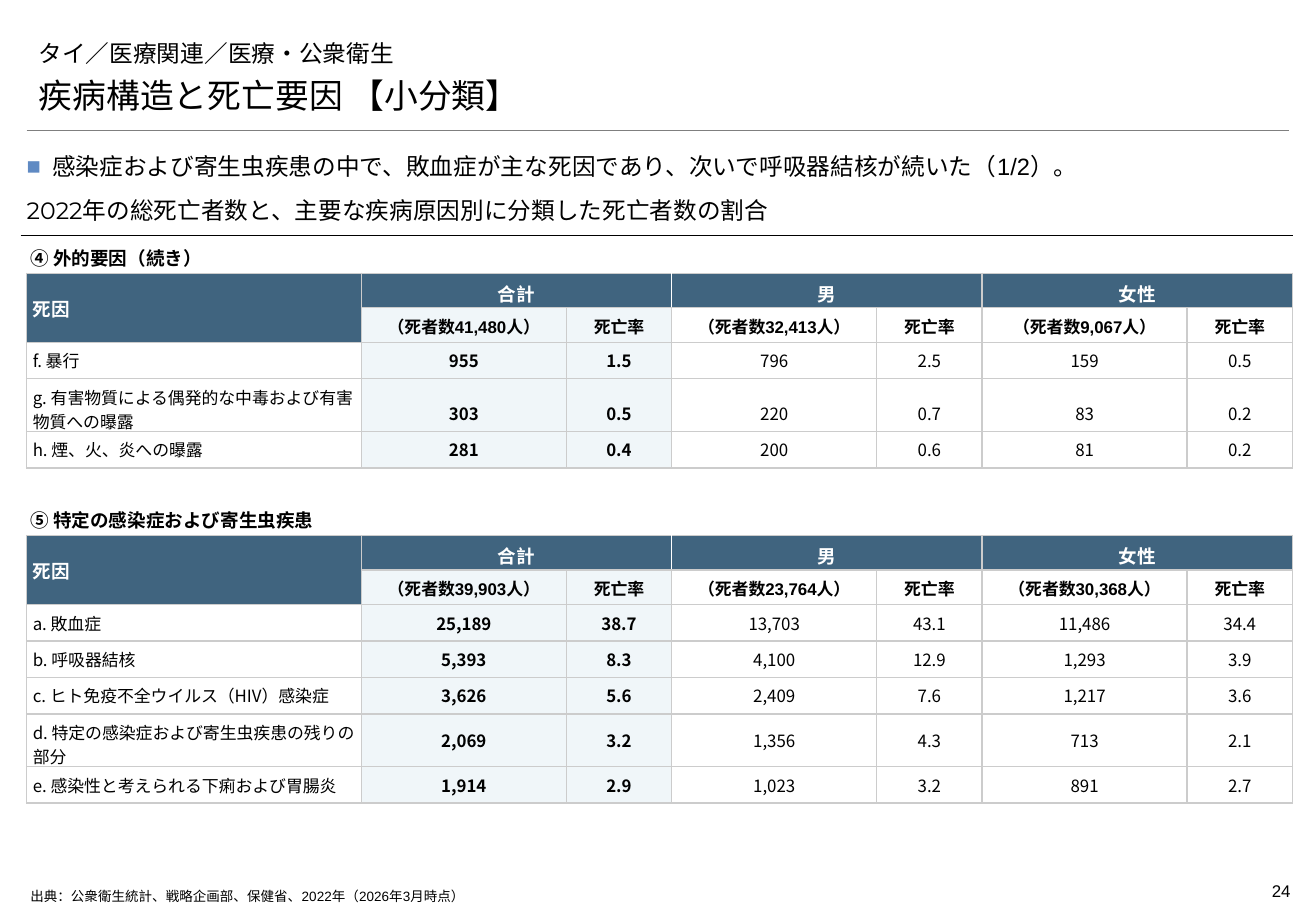
from lxml.etree import SubElement
from pptx import Presentation
from pptx.dml.color import RGBColor
from pptx.enum.shapes import MSO_CONNECTOR as Connector
from pptx.enum.text import MSO_ANCHOR as Anchor, MSO_AUTO_SIZE as AutoSize, PP_ALIGN as Align
from pptx.oxml.ns import qn
from pptx.util import Inches, Pt

WIDTH, HEIGHT = Inches(10.83), Inches(7.5)
COLUMN, ROW = WIDTH / 100, HEIGHT / 100
BLACK = RGBColor(0x00, 0x00, 0x00)
WHITE = RGBColor(0xFF, 0xFF, 0xFF)
GRAY = RGBColor(0x7F, 0x7F, 0x7F)
BORDER = RGBColor(0xCC, 0xCC, 0xCC)
HEADER = RGBColor(0x40, 0x64, 0x7F)
TOTAL = RGBColor(0xF0, 0xF6, 0xF9)
BULLET = RGBColor(0x5F, 0x8A, 0xC3)
JAPANESE = "Noto Sans CJK JP"
LEFT, FULL = 2.03, 95.94
TABLE_WIDTH = 96.2
COLUMN_WEIGHTS = [2.76] + [1.69, 0.87] * 3
GROUPS = ["合計", "男", "女性"]

INJURIES = [
    ["f. 暴行", "955", "1.5", "796", "2.5", "159", "0.5"],
    ["g. 有害物質による偶発的な中毒および有害物質への曝露", "303", "0.5", "220", "0.7", "83", "0.2"],
    ["h. 煙、火、炎への曝露", "281", "0.4", "200", "0.6", "81", "0.2"],
]
INFECTIONS = [
    ["a. 敗血症", "25,189", "38.7", "13,703", "43.1", "11,486", "34.4"],
    ["b. 呼吸器結核", "5,393", "8.3", "4,100", "12.9", "1,293", "3.9"],
    ["c. ヒト免疫不全ウイルス（HIV）感染症", "3,626", "5.6", "2,409", "7.6", "1,217", "3.6"],
    ["d. 特定の感染症および寄生虫疾患の残りの部分", "2,069", "3.2", "1,356", "4.3", "713", "2.1"],
    ["e. 感染性と考えられる下痢および胃腸炎", "1,914", "2.9", "1,023", "3.2", "891", "2.7"],
]


def place(left, top, width, height):
    return round(left * COLUMN), round(top * ROW), round(width * COLUMN), round(height * ROW)


def style(para, size, face, color=BLACK, bold=False, align=Align.LEFT):
    para.alignment = align
    font = para.font
    font.size, font.name, font.bold = Pt(size), face, bold
    font.color.rgb = color
    east_asian = SubElement(para._p.pPr.find(qn("a:defRPr")), qn("a:ea"))
    east_asian.set("typeface", JAPANESE)


def add_text(page, area, text, size, face, anchor=Anchor.TOP, insets=(0.1, 0.05, 0.1, 0.05),
             grow=False, bold=False, align=Align.LEFT, bullet=False):
    box = page.shapes.add_textbox(*place(*area))
    frame = box.text_frame
    frame.word_wrap = True
    frame.auto_size = AutoSize.SHAPE_TO_FIT_TEXT if grow else AutoSize.NONE
    frame.vertical_anchor = anchor
    frame.margin_left, frame.margin_top, frame.margin_right, frame.margin_bottom = map(Inches, insets)
    para = frame.paragraphs[0]
    para.text = text
    if bullet:
        add_bullet(para)
    style(para, size, face, bold=bold, align=align)


def add_bullet(para):
    para.line_spacing, para.space_after = 1.1, Pt(2)
    properties = para._p.get_or_add_pPr()
    properties.set("marL", str(Inches(0.21)))
    properties.set("indent", str(-Inches(0.21)))
    SubElement(SubElement(properties, qn("a:buClr")), qn("a:srgbClr")).set("val", str(BULLET))
    SubElement(properties, qn("a:buFont")).set("typeface", "Arial")
    SubElement(properties, qn("a:buChar")).set("char", "■")


def add_rule(page, start, end, top, color, weight):
    rule = page.shapes.add_connector(
        Connector.STRAIGHT, *place(start, top, end, top))
    rule.line.color.rgb = color
    rule.line.width = Pt(weight)
    SubElement(rule._element.spPr, qn("a:effectLst"))


def set_borders(cell, white_sides=()):
    properties = cell._tc.get_or_add_tcPr()
    for index, side in enumerate(("lnL", "lnR", "lnT", "lnB")):
        line = properties.makeelement(qn(f"a:{side}"), {"w": str(Pt(1))})
        color = WHITE if side in white_sides else BORDER
        SubElement(SubElement(line, qn("a:solidFill")), qn("a:srgbClr")).set("val", str(color))
        properties.insert(index, line)


def fill_cell(cell, text, fill, size, face, color=BLACK, bold=False,
              align=Align.CENTER, anchor=Anchor.MIDDLE, white_sides=()):
    cell.margin_left = cell.margin_right = cell.margin_top = cell.margin_bottom = Inches(0.05)
    cell.vertical_anchor = anchor
    if fill is None:
        cell.fill.background()
    else:
        cell.fill.solid()
        cell.fill.fore_color.rgb = fill
    set_borders(cell, white_sides)
    para = cell.text_frame.paragraphs[0]
    para.text = text
    style(para, size, face, color, bold, align)


def add_section(page, top, height, caption, deaths, causes, number_anchor):
    add_text(page, (1.39, top, 24.38, 3.87), caption, 11, JAPANESE, grow=True, bold=True)
    area = place(LEFT, top + 3.6, TABLE_WIDTH, height)
    holder = page.shapes.add_table(len(causes) + 2, len(COLUMN_WEIGHTS), *area)
    table = holder.table
    table.first_row = table.horz_banding = False
    for column, weight in zip(table.columns, COLUMN_WEIGHTS):
        column.width = round(area[2] * weight / sum(COLUMN_WEIGHTS))
    for row, share in zip(table.rows, [2.13, 0] + [4] * len(causes)):
        row.height = round(share * ROW)
    holder.height = area[3]

    table.cell(0, 0).merge(table.cell(1, 0))
    for row in range(2):
        fill_cell(table.cell(row, 0), "" if row else "死因", HEADER, 11, "Arial", WHITE, True, Align.LEFT)
    for index, (group, count) in enumerate(zip(GROUPS, deaths)):
        first = 1 + 2 * index
        table.cell(0, first).merge(table.cell(0, first + 1))
        white_sides = [("lnR",), ("lnL",), ()][index]
        subheads = [f"（死者数{count}人）", "死亡率"]
        for offset, subhead in enumerate(subheads):
            column = first + offset
            fill_cell(table.cell(0, column), "" if offset else group, HEADER, 11, "Arial",
                      WHITE, True, white_sides=white_sides)
            fill_cell(table.cell(1, column), subhead, None if index else TOTAL, 10, "Arial", bold=True)
    for row, (cause, *numbers) in enumerate(causes, 2):
        fill_cell(table.cell(row, 0), cause, None, 10, JAPANESE, align=Align.LEFT)
        for column, number in enumerate(numbers, 1):
            total = column < 3
            fill_cell(table.cell(row, column), number, TOTAL if total else None, 10, JAPANESE,
                      bold=total, anchor=number_anchor)


def add_heading(page):
    add_rule(page, LEFT, LEFT + FULL, 14.27, GRAY, 0.25)
    add_text(page, (LEFT, 3.47, FULL, 4.53), "タイ／医療関連／医療・公衆衛生", 14, "Montserrat",
             Anchor.BOTTOM, grow=True)
    add_text(page, (LEFT, 7.47, FULL, 5.87), "疾病構造と死亡要因 【小分類】", 20, "Montserrat",
             Anchor.BOTTOM, grow=True)


def add_summary(page):
    add_rule(page, 1.57, 98.25, 25.87, BLACK, 0.75)
    add_text(page, (LEFT, 21.6, TABLE_WIDTH, 4.13),
             "2022年の総死亡者数と、主要な疾病原因別に分類した死亡者数の割合", 14, "Montserrat",
             Anchor.BOTTOM, (0, 0.05, 0, 0.08))
    add_text(page, (LEFT, 16.4, FULL, 3.2),
             "感染症および寄生虫疾患の中で、敗血症が主な死因であり、次いで呼吸器結核が続いた（1/2）。",
             14, "Arial", insets=(0, 0, 0, 0), grow=True, align=Align.JUSTIFY, bullet=True)


def add_footer(page):
    add_text(page, (2.31, 97.47, 89.5, 2.13),
             "出典：公衆衛生統計、戦略企画部、保健省、2022年（2026年3月時点）", 8, "Arial",
             insets=(0, 0, 0, 0))
    add_text(page, (90.77, 96, 7.29, 3.6), "24", 10, "Arial", insets=(0, 0.05, 0, 0.05),
             grow=True, align=Align.RIGHT)


def main():
    deck = Presentation()
    deck.slide_width, deck.slide_height = WIDTH, HEIGHT
    page = deck.slides.add_slide(deck.slide_layouts[6])
    add_heading(page)
    add_summary(page)
    add_section(page, 26.4, 21.07, "④ 外的要因（続き）", ["41,480", "32,413", "9,067"],
                INJURIES, Anchor.BOTTOM)
    add_section(page, 55.2, 29.07, "⑤ 特定の感染症および寄生虫疾患", ["39,903", "23,764", "30,368"],
                INFECTIONS, Anchor.MIDDLE)
    add_footer(page)
    deck.save("out.pptx")


if __name__ == "__main__":
    main()
